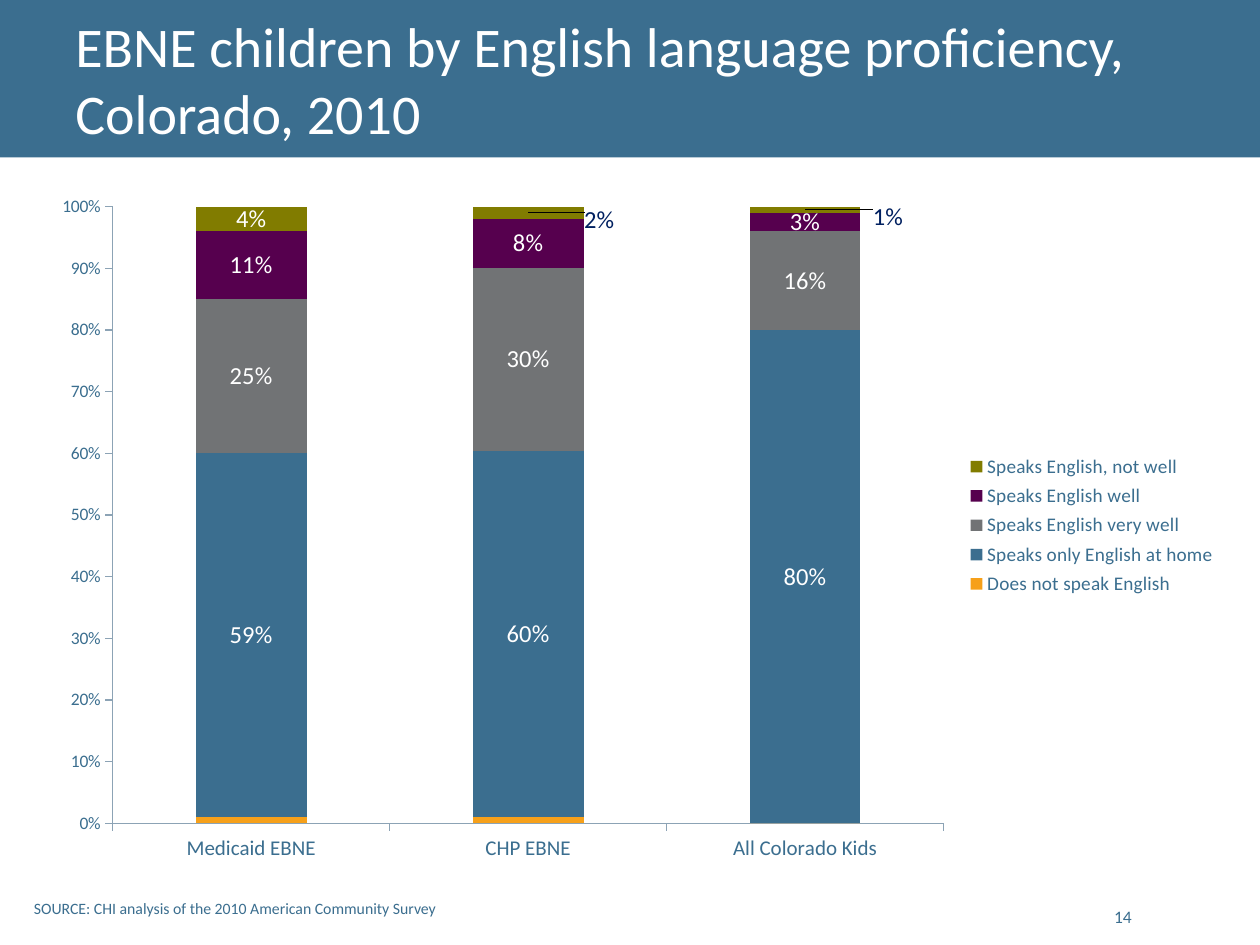
from dataclasses import dataclass
from typing import Optional

from lxml import etree
from pptx import Presentation
from pptx.chart.data import CategoryChartData
from pptx.dml.color import RGBColor
from pptx.enum.chart import XL_CHART_TYPE, XL_LEGEND_POSITION, XL_TICK_MARK
from pptx.enum.shapes import MSO_SHAPE
from pptx.enum.text import MSO_ANCHOR, PP_ALIGN
from pptx.oxml.ns import qn
from pptx.util import Inches, Pt


@dataclass(frozen=True)
class Theme:
    font: str = "Calibri"
    blue: str = "3B6E8F"
    white: str = "FFFFFF"
    navy: str = "002060"
    line: str = "8CA3B5"
    title: int = 32
    value: int = 14
    group: int = 12
    legend: int = 11
    base: int = 10
    source: int = 9


@dataclass(frozen=True)
class Label:
    text: str
    box: tuple
    size: int
    color: str
    anchor: MSO_ANCHOR = MSO_ANCHOR.TOP
    align: PP_ALIGN = PP_ALIGN.LEFT
    wrap: bool = True


@dataclass(frozen=True)
class Level:
    name: str
    values: tuple
    color: str
    shown: bool = True
    moved: Optional[dict] = None  # point index -> label offset


THEME = Theme()
GROUPS = ("Medicaid EBNE", "CHP EBNE", "All Colorado Kids")
LEVELS = (
    Level("Does not speak English", (0.01, 0.01, 0), "F6A01A", shown=False),
    Level("Speaks only English at home", (0.59, 0.6, 0.8), THEME.blue),
    Level("Speaks English very well", (0.25, 0.3, 0.16), "717375"),
    Level("Speaks English well", (0.11, 0.08, 0.03), "56004E"),
    Level("Speaks English, not well", (0.04, 0.02, 0.01), "817C00",
          moved={1: (0.06, 0.01), 2: (0.07, 0.01)}),
)
LABELS = (
    Label("EBNE children by English language proficiency, Colorado, 2010",
          (0.5, 0, 9, 1.25), THEME.title, THEME.white, MSO_ANCHOR.MIDDLE),
    Label("SOURCE: CHI analysis of the 2010 American Community Survey",
          (0.17, 7.08, 3.42, 0.25), THEME.source, THEME.blue, wrap=False),
    Label("14", (8.68, 7.01, 0.4, 0.4), THEME.base, THEME.blue,
          MSO_ANCHOR.BOTTOM, PP_ALIGN.RIGHT),
)


def place(box: tuple) -> list:
    return [Inches(n) for n in box]


def style(font, size: int, color: str) -> None:
    font.name = THEME.font
    font.size = Pt(size)
    font.color.rgb = RGBColor.from_string(color)


def paint(fill, color: str) -> None:
    fill.solid()
    fill.fore_color.rgb = RGBColor.from_string(color)


def add_label(slide, label: Label) -> None:
    frame = slide.shapes.add_textbox(*place(label.box)).text_frame
    frame.word_wrap = label.wrap
    frame.vertical_anchor = label.anchor
    frame.text = label.text
    para = frame.paragraphs[0]
    para.alignment = label.align
    style(para.runs[0].font, label.size, label.color)


def make_layout(**parts) -> etree._Element:
    layout = etree.Element(qn("c:layout"))
    manual = etree.SubElement(layout, qn("c:manualLayout"))
    for tag, value in parts.items():
        etree.SubElement(manual, qn(f"c:{tag}")).set("val", str(value))
    return layout


def set_layout(parent, index: int, **parts) -> None:
    for old in parent.findall(qn("c:layout")):
        parent.remove(old)
    parent.insert(index, make_layout(**parts))


def style_level(series, level: Level) -> None:
    paint(series.format.fill, level.color)
    if not level.shown:
        return
    labels = series.data_labels
    labels.show_value = True
    labels.number_format = "0%"
    labels.number_format_is_linked = False
    style(labels.font, THEME.value, THEME.white)
    for index, (x, y) in (level.moved or {}).items():
        style(series.points[index].data_label.font, THEME.value, THEME.navy)
        item = series._element.xpath(f"c:dLbls/c:dLbl[c:idx/@val='{index}']")[0]
        set_layout(item, 1, x=x, y=y)


def style_axis(axis, size: int) -> None:
    axis.has_major_gridlines = False
    axis.major_tick_mark = XL_TICK_MARK.OUTSIDE
    axis.minor_tick_mark = XL_TICK_MARK.NONE
    axis.format.line.color.rgb = RGBColor.from_string(THEME.line)
    axis.format.line.width = Pt(0.75)
    style(axis.tick_labels.font, size, THEME.blue)


def add_bars(slide, box: tuple) -> None:
    data = CategoryChartData(number_format="0%")
    data.categories = GROUPS
    for level in LEVELS:
        data.add_series(level.name, level.values)
    chart = slide.shapes.add_chart(
        XL_CHART_TYPE.COLUMN_STACKED_100, *place(box), data).chart
    chart.has_title = False
    style(chart.font, THEME.base, THEME.blue)

    # Bars
    plot = chart.plots[0]
    plot.overlap = 100
    plot.gap_width = 150
    plot.vary_by_categories = False
    for series, level in zip(plot.series, LEVELS):
        style_level(series, level)

    # Axes
    style_axis(chart.category_axis, THEME.group)
    style_axis(chart.value_axis, THEME.base)
    scale = chart.value_axis
    scale.minimum_scale, scale.maximum_scale, scale.major_unit = 0, 1, 0.1
    scale.tick_labels.number_format = "0%"
    scale.tick_labels.number_format_is_linked = False

    # Legend and plot area
    chart.has_legend = True
    legend = chart.legend
    legend.position = XL_LEGEND_POSITION.RIGHT
    legend.include_in_layout = False
    style(legend.font, THEME.legend, THEME.blue)
    edge = dict(xMode="edge", yMode="edge")
    set_layout(legend._element, 1, **edge, x=0.78, y=0.39, w=0.21, h=0.22)
    area = chart._chartSpace.find(f".//{qn('c:plotArea')}")
    set_layout(area, 0, layoutTarget="inner", **edge,
               x=0.06, y=0.04, w=0.7, h=0.89)


def main() -> None:
    deck = Presentation()
    deck.slide_width, deck.slide_height = Inches(10), Inches(7.5)
    slide = deck.slides.add_slide(deck.slide_layouts[6])

    # Title band
    band = slide.shapes.add_shape(
        MSO_SHAPE.RECTANGLE, *place((0, 0, 10, 1.25)))
    band.shadow.inherit = False
    paint(band.fill, THEME.blue)
    band.line.fill.background()

    # Text and chart
    for label in LABELS:
        add_label(slide, label)
    add_bars(slide, (0.33, 1.42, 9.42, 5.5))
    deck.save("out.pptx")


if __name__ == "__main__":
    main()
